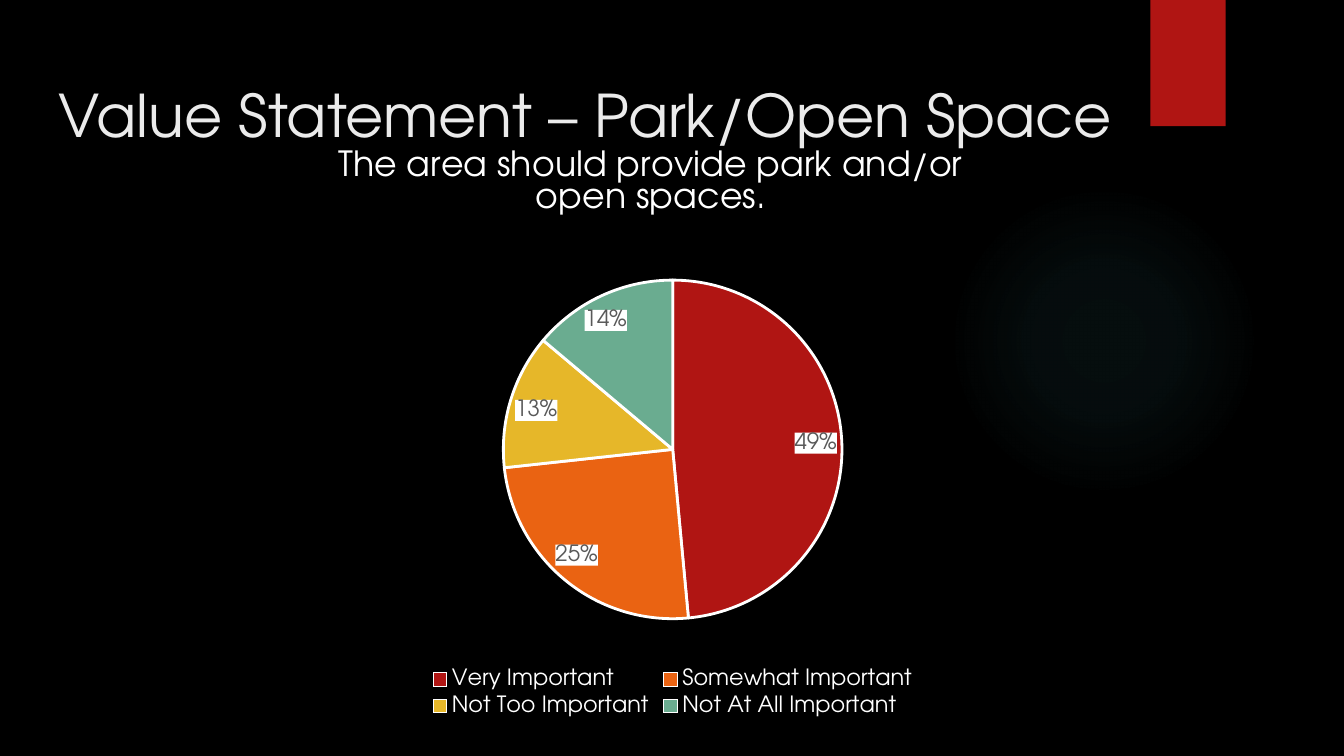
from typing import NamedTuple

from lxml import etree
from pptx import Presentation
from pptx.chart import data as chart_data
from pptx.dml.color import RGBColor
from pptx.enum import chart as charts, shapes, text
from pptx.oxml import parse_xml
from pptx.oxml.ns import qn
from pptx.util import Inches, Pt

FONT = "TeX Gyre Adventor"
NAMESPACE = "http://schemas.openxmlformats.org/drawingml/2006/main"
WHITE = "FFFFFF"


class Answer(NamedTuple):
    label: str
    percent: int
    color: str


class GlowStop(NamedTuple):
    position: int
    opacity: int


ANSWERS = [
    Answer("Very Important", 49, "B01513"),
    Answer("Somewhat Important", 25, "EA6312"),
    Answer("Not Too Important", 13, "E6B729"),
    Answer("Not At All Important", 14, "6AAC90"),
]
GLOW_STOPS = [GlowStop(0, 7), GlowStop(36, 6), GlowStop(69, 0)]


def rgb(color: str) -> RGBColor:
    return RGBColor.from_string(color)


def style_font(font, size: float, color: str) -> None:
    font.name = FONT
    font.size = Pt(size)
    font.bold = False
    font.color.rgb = rgb(color)


def add_plain_shape(slide, kind, left: float, top: float, width: float, height: float, color: str):
    shape = slide.shapes.add_shape(kind, Inches(left), Inches(top), Inches(width), Inches(height))
    shape.shadow.inherit = False
    shape.fill.solid()
    shape.fill.fore_color.rgb = rgb(color)
    shape.line.fill.background()
    return shape


def add_glow(slide) -> None:
    color = "50B9C1"
    shape = add_plain_shape(slide, shapes.MSO_SHAPE.OVAL, 7.06, 1.38, 2.31, 2.31, color)
    stops = "".join(
        f'<a:gs pos="{stop.position * 1000}"><a:srgbClr val="{color}">'
        f'<a:alpha val="{stop.opacity * 1000}"/></a:srgbClr></a:gs>'
        for stop in GLOW_STOPS
    )
    gradient = parse_xml(
        f'<a:gradFill xmlns:a="{NAMESPACE}" rotWithShape="1"><a:gsLst>{stops}</a:gsLst>'
        '<a:path path="circle"><a:fillToRect l="50000" t="50000" r="50000" b="50000"/></a:path>'
        "</a:gradFill>"
    )
    properties = shape._element.spPr
    properties.replace(properties.find(qn("a:solidFill")), gradient)


def add_heading(slide) -> None:
    box = slide.shapes.add_textbox(Inches(0.34), Inches(0.49), Inches(9.32), Inches(0.63))
    frame = box.text_frame
    frame.word_wrap = True
    frame.vertical_anchor = text.MSO_ANCHOR.MIDDLE
    frame.margin_left = frame.margin_right = frame.margin_bottom = Inches(0.1)
    frame.margin_top = Inches(0.19)
    frame.text = "Value Statement – Park/Open Space"
    style_font(frame.paragraphs[0].runs[0].font, 31.5, "EBEBEB")


def set_layout(parent, position: int, inner: bool, **fractions: float) -> None:
    for old in parent.findall(qn("c:layout")):
        parent.remove(old)
    layout = etree.Element(qn("c:layout"))
    manual = etree.SubElement(layout, qn("c:manualLayout"))
    if inner:
        etree.SubElement(manual, qn("c:layoutTarget")).set("val", "inner")
    for axis in "xy":
        etree.SubElement(manual, qn(f"c:{axis}Mode")).set("val", "edge")
    for name, value in fractions.items():
        etree.SubElement(manual, qn(f"c:{name}")).set("val", str(value))
    parent.insert(position, layout)


def add_pie(slide) -> None:
    data = chart_data.CategoryChartData()
    data.categories = [answer.label for answer in ANSWERS]
    data.add_series("Series 1", [answer.percent for answer in ANSWERS])
    chart = slide.shapes.add_chart(
        charts.XL_CHART_TYPE.PIE, Inches(1.67), Inches(0.87), Inches(6.67), Inches(4.5), data
    ).chart
    style_font(chart.font, 10, WHITE)

    chart.has_title = True
    title = chart.chart_title
    title.include_in_layout = False
    paragraph = title.text_frame.paragraphs[0]
    paragraph.text = "The area should provide park and/or open spaces."
    paragraph.alignment = text.PP_ALIGN.CENTER
    style_font(paragraph.runs[0].font, 18.6, WHITE)
    set_layout(title._element, 1, False, x=0.12, y=0.04)

    chart.has_legend = True
    chart.legend.position = charts.XL_LEGEND_POSITION.BOTTOM
    chart.legend.include_in_layout = False
    style_font(chart.legend.font, 12, WHITE)

    plot = chart.plots[0]
    plot.vary_by_categories = True
    set_layout(chart._chartSpace.chart.plotArea, 0, True, x=0.31, y=0.27, w=0.38, h=0.56)
    series = plot.series[0]
    for index, answer in enumerate(ANSWERS):
        point = series.points[index].format
        point.fill.solid()
        point.fill.fore_color.rgb = rgb(answer.color)
        point.line.color.rgb = rgb(WHITE)
        point.line.width = Pt(1.5)

    labels = series.data_labels
    labels.show_percentage = True
    labels.show_value = False
    labels.number_format = "0%"
    labels.number_format_is_linked = False
    labels.position = charts.XL_LABEL_POSITION.BEST_FIT
    style_font(labels.font, 12, "595959")
    background = etree.Element(qn("c:spPr"))
    fill = etree.SubElement(background, qn("a:solidFill"))
    etree.SubElement(fill, qn("a:srgbClr")).set("val", WHITE)
    labels._element.find(qn("c:txPr")).addprevious(background)


def main() -> None:
    presentation = Presentation()
    presentation.slide_width = Inches(10)
    presentation.slide_height = presentation.slide_width * 9 // 16
    slide = presentation.slides.add_slide(presentation.slide_layouts[6])
    slide.background.fill.solid()
    slide.background.fill.fore_color.rgb = rgb("000000")
    add_glow(slide)
    add_plain_shape(slide, shapes.MSO_SHAPE.RECTANGLE, 8.56, 0, 0.56, 0.94, "B01513")
    add_heading(slide)
    add_pie(slide)
    presentation.save("out.pptx")


if __name__ == "__main__":
    main()
